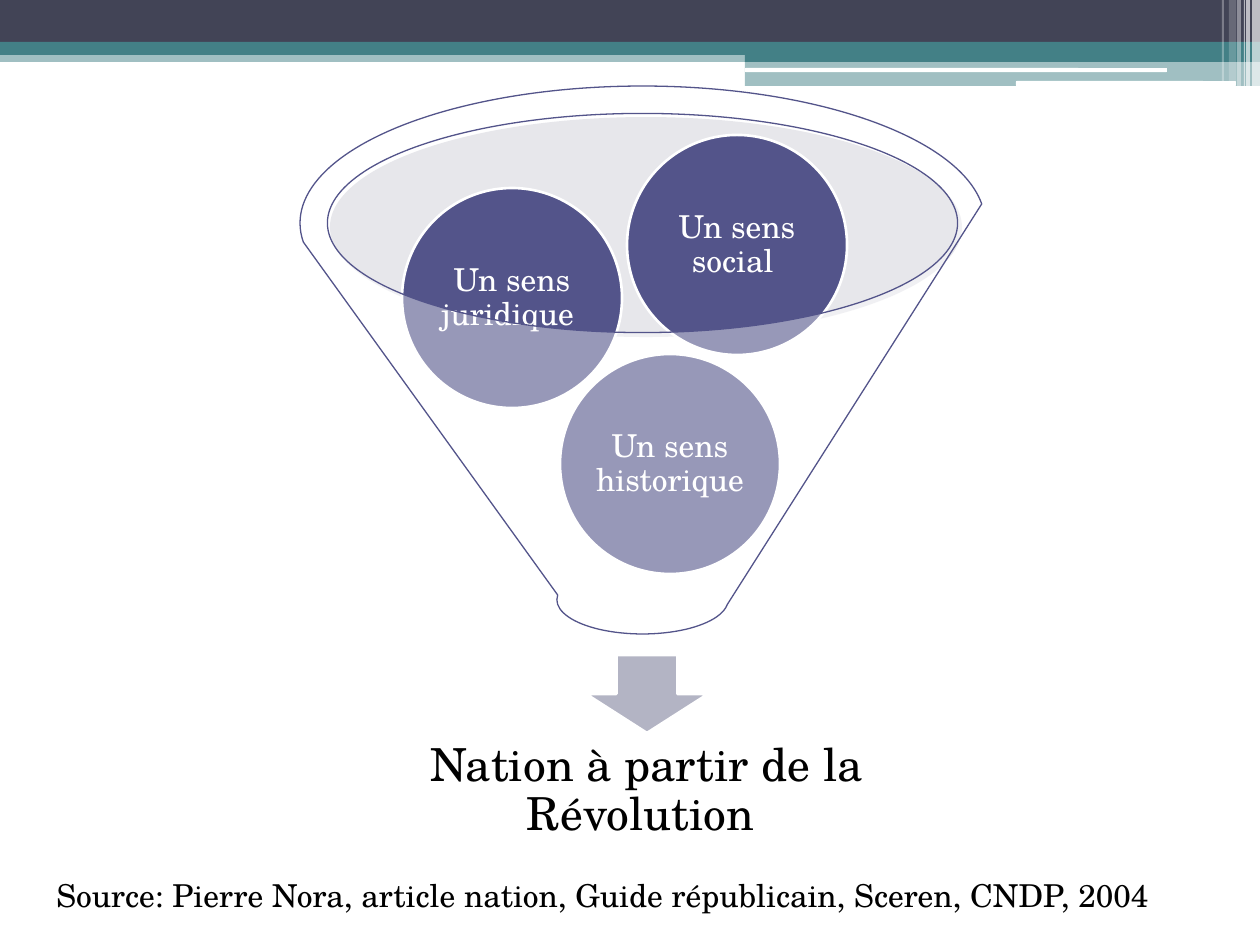
from pptx import Presentation, util as u
from pptx.dml.color import RGBColor
from pptx.enum import shapes, text
from pptx.oxml.ns import qn
from lxml import etree

PX = 914400 / 126
FONT = "TeX Gyre Schola"
WHITE = RGBColor(0xFF, 0xFF, 0xFF)
BLACK = RGBColor(0, 0, 0)
TEAL = RGBColor(0x43, 0x80, 0x86)
SLATE = RGBColor(0x42, 0x44, 0x56)
INDIGO = RGBColor(0x53, 0x54, 0x8A)
MIST = RGBColor(0xC3, 0xC3, 0xCF)
GREY = RGBColor(0xB3, 0xB4, 0xC4)
KIND = shapes.MSO_SHAPE

# left, top, width, height in px, colour, opacity in percent
BANDS = [
    (0, 50, 1260, 12, TEAL, 50),
    (0, 0, 1260, 42, SLATE, 100),
    (0, 42, 1260, 13, TEAL, 100),
    (745, 49, 515, 13, TEAL, 100),
    (745, 61, 515, 25, TEAL, 50),
]
RULES = [(745, 68, 422, 4), (1016, 81, 220, 5)]
# left, width, height in px, opacity in percent
STRIPES = [
    (1252, 8, 86, 65), (1246, 4, 86, 65), (1244, 1, 86, 60),
    (1237, 4, 86, 40), (1229, 7, 81, 20), (1222, 2, 81, 30),
]
BALL = 220
SENSES = [
    ("Un sens historique ", 560, 354),
    ("Un sens juridique ", 402, 188),
    ("Un sens social ", 627, 135),
]
RESULT = "Nation à partir de la Révolution "
SOURCE = "Source: Pierre Nora, article nation, Guide républicain, Sceren, CNDP, 2004"


def px(*nums):
    return [round(n * PX) for n in nums]


def draw(kind, box, fill, alpha=100, line=None, width=1.5):
    shape = slide.shapes.add_shape(kind, *px(*box))
    shape.shadow.inherit = False
    shape.fill.solid()
    shape.fill.fore_color.rgb = fill
    if alpha < 100:
        tint = shape.fill._xPr.find(qn("a:solidFill"))[0]
        etree.SubElement(tint, qn("a:alpha"), val=str(alpha * 1000))
    if line is None:
        shape.line.fill.background()
    else:
        shape.line.color.rgb = line
        shape.line.width = u.Pt(width)
    return shape


def write(shape, words, size=18, color=BLACK, pad=None, align=None,
          anchor=text.MSO_ANCHOR.TOP, space=None):
    frame = shape.text_frame
    frame.word_wrap = True
    frame.vertical_anchor = anchor
    if pad is not None:
        frame.margin_left = frame.margin_right = px(pad)[0]
        frame.margin_top = frame.margin_bottom = px(pad)[0]
    para = frame.paragraphs[0]
    para.alignment = align
    para.line_spacing = space
    run = para.add_run()
    run.text = words
    run.font.name = FONT
    run.font.size = u.Pt(size)
    run.font.color.rgb = color


def label(shape, words, **form):
    write(shape, words, align=text.PP_ALIGN.CENTER,
          anchor=text.MSO_ANCHOR.MIDDLE, space=0.9, **form)


deck = Presentation()
deck.slide_width, deck.slide_height = px(1260, 945)
slide = deck.slides.add_slide(deck.slide_layouts[6])

for *box, color, alpha in BANDS:
    draw(KIND.RECTANGLE, box, color, alpha)
for box in RULES:
    draw(KIND.ROUNDED_RECTANGLE, box, WHITE)
for left, wide, high, alpha in STRIPES:
    draw(KIND.RECTANGLE, (left, 0, wide, high), WHITE, alpha)

draw(KIND.OVAL, (330, 117, 632, 220), MIST, 40)
draw(KIND.DOWN_ARROW, (586, 655, 122, 78), GREY, line=WHITE)
label(slide.shapes.add_textbox(*px(353, 718, 588, 147)), RESULT,
      size=26, pad=25)
for words, left, top in SENSES:
    ball = draw(KIND.OVAL, (left, top, BALL, BALL), INDIGO, line=WHITE)
    label(ball, words, color=WHITE, pad=0)
draw(KIND.FUNNEL, (300, 86, 685, 548), WHITE, 40, INDIGO, 0.75)

write(slide.shapes.add_textbox(*px(44, 870, 1171, 50)), SOURCE)

deck.save("out.pptx")
